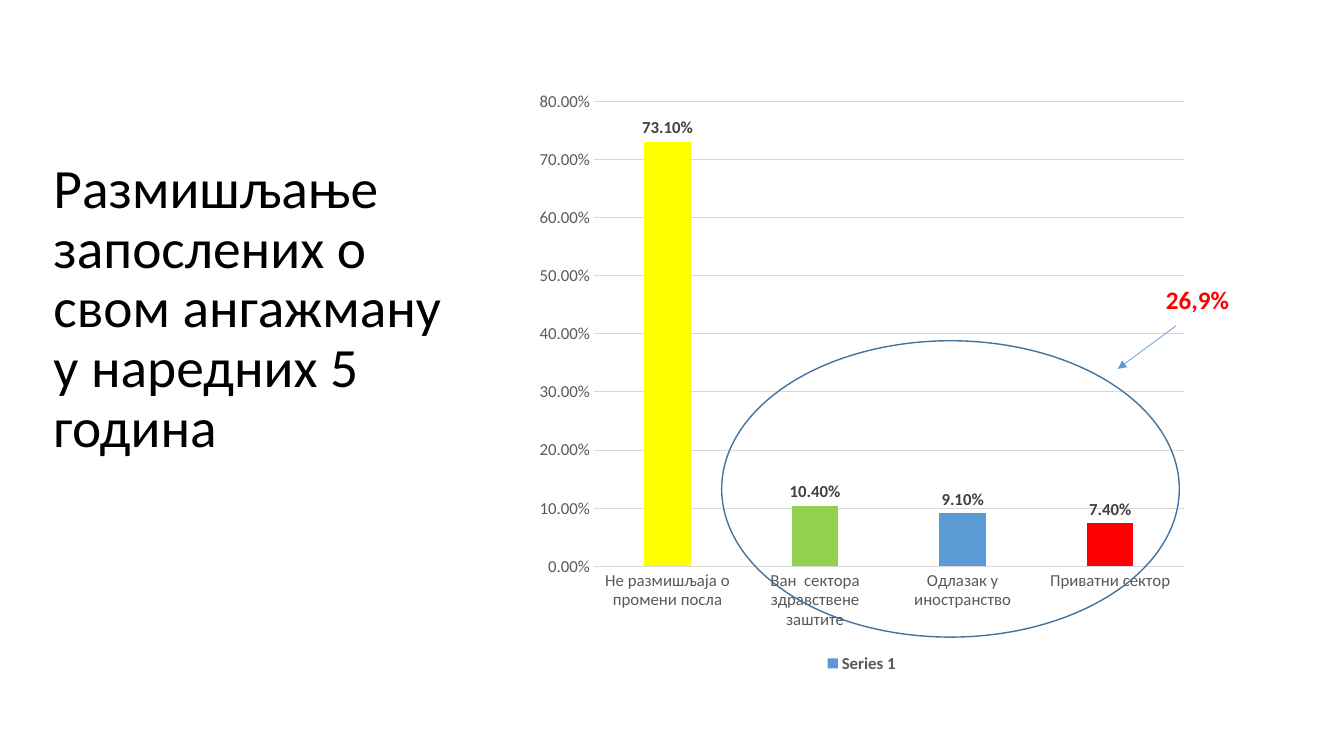
from lxml.etree import SubElement
from pptx import Presentation
from pptx.chart.data import CategoryChartData
from pptx.dml.color import RGBColor
from pptx.enum.chart import XL_CHART_TYPE as ChartType, XL_LABEL_POSITION as LabelPos
from pptx.enum.chart import XL_LEGEND_POSITION as LegendPos, XL_TICK_MARK as Tick
from pptx.enum.shapes import MSO_CONNECTOR as Connector, MSO_SHAPE as Shape
from pptx.enum.text import MSO_ANCHOR as Anchor, MSO_AUTO_SIZE as AutoSize, PP_ALIGN as Align
from pptx.oxml.ns import qn
from pptx.util import Pt

COLORS = {
    "title": "000000", "axis": "595959", "label": "404040", "grid": "D9D9D9",
    "series": "5B9BD5", "stay": "FFFF00", "outside": "92D050",
    "private": "FF0000", "ring": "43739E", "total": "FF0000",
}
FONT = "Calibri"
PERCENT = "0.00%"


def style_font(font, size, color, bold=False):
    """Set the face, size, colour and weight of a font."""
    font.name, font.size, font.bold = FONT, Pt(size), bold
    font.color.rgb = RGBColor.from_string(COLORS[color])


def write(frame, text, size, color, bold=False, spacing=1.0, anchor=Anchor.TOP):
    """Put one formatted paragraph in a text frame."""
    frame.word_wrap = True
    frame.vertical_anchor = anchor
    paragraph = frame.paragraphs[0]
    paragraph.alignment = Align.LEFT
    paragraph.line_spacing = spacing
    run = paragraph.add_run()
    run.text = text
    style_font(run.font, size, color, bold)


class SlideBuilder:
    """Hold the current slide and draw its elements in one style."""

    def __init__(self, slide):
        self.slide = slide
        self.shapes = slide.shapes

    def paint_line(self, line, color, width):
        """Give a line its colour and width."""
        line.color.rgb = RGBColor.from_string(COLORS[color])
        line.width = Pt(width)

    def title(self, text, left, top, width, height):
        """Place and fill the title placeholder."""
        heading = self.shapes.title
        heading.left, heading.top = Pt(left), Pt(top)
        heading.width, heading.height = Pt(width), Pt(height)
        heading.text_frame.auto_size = AutoSize.NONE
        write(heading.text_frame, text, 39.6, "title", spacing=0.9, anchor=Anchor.MIDDLE)

    def column_chart(self, name, answers, left, top, width, height):
        """Draw a column chart from (category, value, colour) rows."""
        data = CategoryChartData(number_format=PERCENT)
        data.categories = [category for category, _, _ in answers]
        data.add_series(name, [value for _, value, _ in answers])
        chart = self.shapes.add_chart(
            ChartType.COLUMN_CLUSTERED, Pt(left), Pt(top), Pt(width), Pt(height), data
        ).chart
        chart.has_title = False
        style_font(chart.font, 10, "title")
        chart.has_legend = True
        chart.legend.position = LegendPos.BOTTOM
        chart.legend.include_in_layout = False
        style_font(chart.legend.font, 12, "axis", bold=True)

        for axis in (chart.category_axis, chart.value_axis):
            axis.major_tick_mark = axis.minor_tick_mark = Tick.NONE
            style_font(axis.tick_labels.font, 12, "axis")
        self.paint_line(chart.category_axis.format.line, "grid", 0.75)
        values = chart.value_axis
        values.format.line.fill.background()
        values.has_major_gridlines = True
        self.paint_line(values.major_gridlines.format.line, "grid", 0.75)
        values.tick_labels.number_format = PERCENT
        values.tick_labels.number_format_is_linked = False

        plot = chart.plots[0]
        plot.gap_width, plot.overlap, plot.vary_by_categories = 219, -27, False
        columns = plot.series[0]
        self.fill(columns, "series")
        for index, (_, _, color) in enumerate(answers):
            if color != "series":
                self.fill(columns.points[index], color)
        labels = columns.data_labels
        labels.show_value = True
        labels.position = LabelPos.OUTSIDE_END
        labels.number_format, labels.number_format_is_linked = PERCENT, False
        style_font(labels.font, 12, "label", bold=True)

    def fill(self, part, color):
        """Fill a series or a point with a solid colour."""
        part.format.fill.solid()
        part.format.fill.fore_color.rgb = RGBColor.from_string(COLORS[color])

    def ring(self, left, top, width, height):
        """Draw an unfilled ellipse."""
        ellipse = self.shapes.add_shape(Shape.OVAL, Pt(left), Pt(top), Pt(width), Pt(height))
        ellipse.shadow.inherit = False
        ellipse.fill.background()
        self.paint_line(ellipse.line, "ring", 1)

    def arrow(self, x1, y1, x2, y2):
        """Draw a thin line with an arrowhead at its end."""
        pointer = self.shapes.add_connector(Connector.STRAIGHT, Pt(x1), Pt(y1), Pt(x2), Pt(y2))
        self.paint_line(pointer.line, "series", 0.5)
        properties = pointer.element.spPr
        SubElement(properties.find(qn("a:ln")), qn("a:tailEnd"), type="triangle")
        SubElement(properties, qn("a:effectLst"))

    def note(self, text, left, top, width, height):
        """Add a bold text box."""
        box = self.shapes.add_textbox(Pt(left), Pt(top), Pt(width), Pt(height))
        box.text_frame.auto_size = AutoSize.SHAPE_TO_FIT_TEXT
        write(box.text_frame, text, 18, "total", bold=True)


def main():
    """Build the slide and save it."""
    deck = Presentation()
    deck.slide_width, deck.slide_height = Pt(960), Pt(540)
    builder = SlideBuilder(deck.slides.add_slide(deck.slide_layouts[5]))
    builder.title("Размишљање запослених о свом ангажману у наредних 5 година",
                  31, 169.2, 306.7, 104.4)
    answers = [
        ("Не размишљаја о промени посла", 0.731, "stay"),
        ("Ван  сектора здравствене заштите", 0.104, "outside"),
        ("Одлазак у иностранство", 0.091, "series"),
        ("Приватни сектор", 0.074, "private"),
    ]
    builder.column_chart("Series 1", answers, 375.8, 56.9, 479.5, 427)
    builder.ring(515.5, 243.4, 326.9, 211.7)
    builder.arrow(840.2, 232.6, 798.5, 263.5)
    builder.note("26,9%", 825.8, 199.4, 67.7, 28.8)
    deck.save("out.pptx")


if __name__ == "__main__":
    main()
